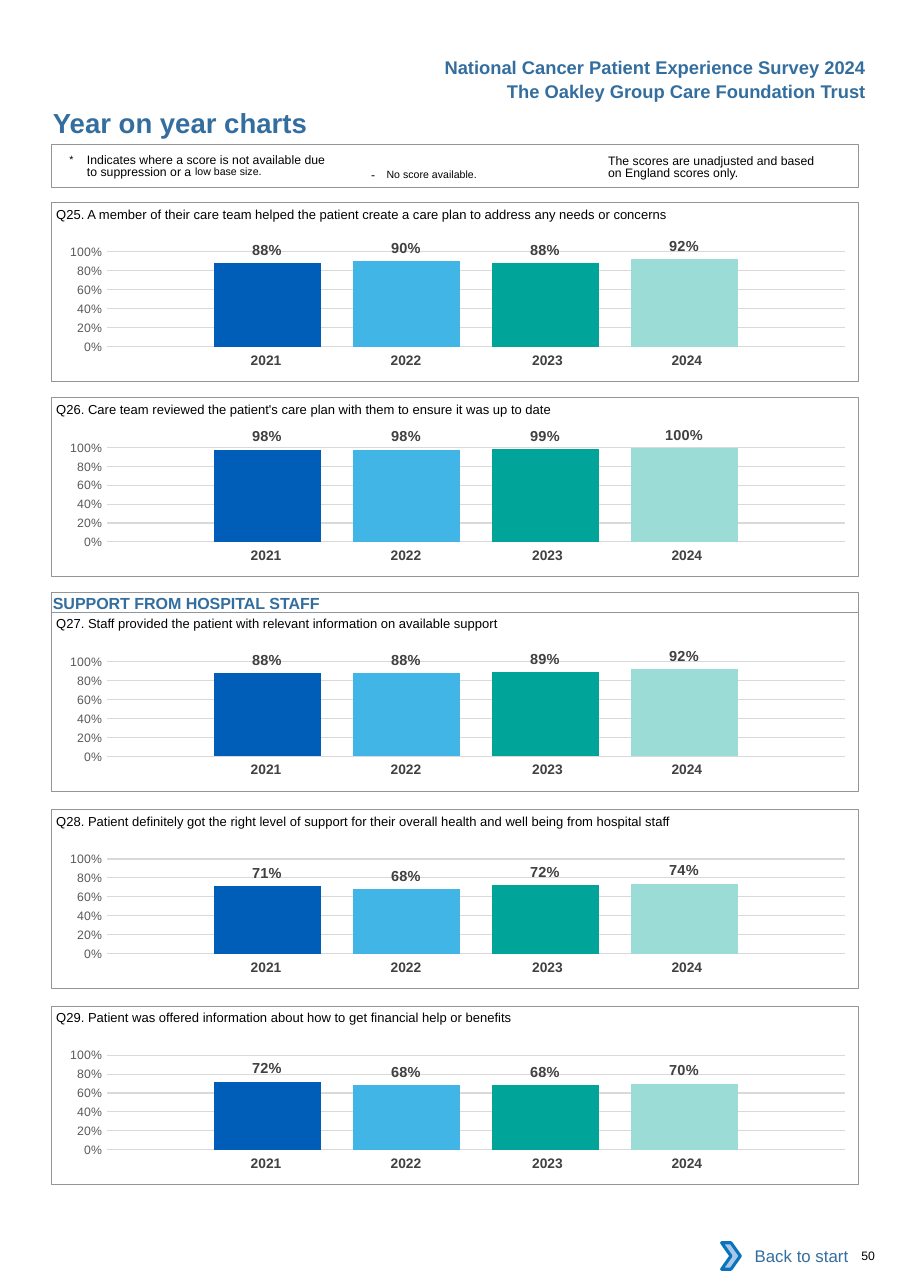
import pptx
import pptx.chart.data
import pptx.dml.color
import pptx.enum.chart
import pptx.enum.shapes
import pptx.enum.text
import pptx.oxml
import pptx.oxml.ns
import pptx.util

Inches = pptx.util.Inches
Pt = pptx.util.Pt
RGBColor = pptx.dml.color.RGBColor
ALIGN = pptx.enum.text.PP_ALIGN
SHAPES = pptx.enum.shapes.MSO_SHAPE
qn = pptx.oxml.ns.qn

HEADING_BLUE = RGBColor(0x33, 0x6E, 0x9F)
BLACK = RGBColor(0, 0, 0)
WHITE = RGBColor(0xFF, 0xFF, 0xFF)
FRAME_GREY = RGBColor(0x93, 0x95, 0x98)
GRID_GREY = RGBColor(0xD9, 0xD9, 0xD9)
AXIS_GREY = RGBColor(0x59, 0x59, 0x59)
LABEL_GREY = RGBColor(0x40, 0x40, 0x40)
YEAR_GREY = RGBColor(0x41, 0x40, 0x42)
CHEVRON_FILL = RGBColor(0xA8, 0xC7, 0xE9)
CHEVRON_LINE = RGBColor(0x0A, 0x74, 0xBB)
YEAR_COLOURS = {
    "2021": RGBColor(0x00, 0x5E, 0xB8),
    "2022": RGBColor(0x41, 0xB6, 0xE6),
    "2023": RGBColor(0x00, 0xA4, 0x99),
    "2024": RGBColor(0x9C, 0xDC, 0xD7),
}

LEFT, WIDTH = 0.47, 7.32
PANEL_HEIGHT = 1.62
YEAR_COLUMNS = [(1.27, 0), (1.27, 0), (1.34, 0.04), (1.27, 0.12)]  # width, right margin

# Panel top, question, score for each year
QUESTIONS = [
    (1.84, "Q25. A member of their care team helped the patient create a care plan "
           "to address any needs or concerns", (0.88, 0.9, 0.88, 0.92)),
    (3.61, "Q26. Care team reviewed the patient's care plan with them to ensure it was "
           "up to date", (0.98, 0.98, 0.99, 1)),
    (5.56, "Q27. Staff provided the patient with relevant information on available "
           "support", (0.88, 0.88, 0.89, 0.92)),
    (7.35, "Q28. Patient definitely got the right level of support for their overall "
           "health and well being from hospital staff", (0.71, 0.68, 0.72, 0.74)),
    (9.13, "Q29. Patient was offered information about how to get financial help or "
           "benefits", (0.72, 0.68, 0.68, 0.7)),
]


def style_font(font, size, colour, bold=False):
    font.name, font.size, font.bold = "Arial", Pt(size), bold
    font.color.rgb = colour


def set_text(frame, text, size, colour, bold=False, align=ALIGN.LEFT, insets=(0, 0, 0, 0)):
    frame.word_wrap = True
    frame.auto_size = pptx.enum.text.MSO_AUTO_SIZE.NONE
    frame.vertical_anchor = pptx.enum.text.MSO_ANCHOR.TOP
    (frame.margin_left, frame.margin_top,
     frame.margin_right, frame.margin_bottom) = map(Inches, insets)
    paragraph = frame.paragraphs[0]
    paragraph.text = text
    paragraph.alignment = align
    style_font(paragraph.font, size, colour, bold)
    return paragraph


def add_text(slide, box, text, size, colour, **options):
    frame = slide.shapes.add_textbox(*map(Inches, box)).text_frame
    return set_text(frame, text, size, colour, **options)


def add_raised_run(paragraph, text, baseline):
    run = paragraph.add_run()
    run.text = text
    run.font.size = Pt(12)
    run.font._element.set("baseline", str(baseline * 1000))


def add_frame(slide, box, line_width=0.5):
    frame = slide.shapes.add_shape(SHAPES.RECTANGLE, *map(Inches, box))
    frame.shadow.inherit = False
    frame.fill.background()
    frame.line.color.rgb = FRAME_GREY
    frame.line.width = Pt(line_width)
    return frame


def add_header(slide):
    lines = ["National Cancer Patient Experience Survey 2024",
             "The Oakley Group Care Foundation Trust"]
    for row, line in enumerate(lines):
        add_text(slide, (3.86, 0.46 + row * 0.22, 4.1, 0.3), line, 12, HEADING_BLUE,
                 bold=True, align=ALIGN.RIGHT, insets=(0.1, 0.05, 0.1, 0.05))
    title = slide.shapes.title
    title.left, title.top, title.width, title.height = map(Inches, (LEFT, 0.96, 4.5, 0.3))
    set_text(title.text_frame, "Year on year charts", 18, HEADING_BLUE, bold=True,
             insets=(0.01, 0, 0, 0))


def add_key(slide, left, top, width, height):
    add_frame(slide, (left, top, width, height), 0.75)

    # Suppressed scores, with a hanging asterisk
    suppressed = add_text(slide, (left + 0.16, top + 0.07, 2.4, 0.27), "", 8, BLACK,
                          insets=(0, 0.03, 0, 0))
    suppressed.line_spacing = Pt(8.1)
    indent = suppressed._p.get_or_add_pPr()
    indent.set("marL", str(Inches(0.16)))
    indent.set("indent", str(Inches(-0.16)))
    add_raised_run(suppressed, "*\t", 3)
    suppressed.add_run().text = "Indicates where a score is not available due to suppression or a "
    add_raised_run(suppressed, "low base size.", 7)

    # Missing scores
    missing = add_text(slide, (left + 2.8, top + 0.1, 1.83, 0.24), "", 8, BLACK,
                       insets=(0.1, 0.05, 0.1, 0.05))
    dash = missing.add_run()
    dash.text = "- "
    dash.font._element.set("spc", "260")
    add_raised_run(missing, "No score available.", 3)

    # Basis of the scores
    basis = add_text(slide, (left + 5.05, top + 0.07, 2.01, 0.27),
                     "The scores are unadjusted and based on England scores only.", 8, BLACK,
                     insets=(0, 0.03, 0, 0))
    basis.line_spacing = Pt(8.1)


def place_plot(chart, x, y, w, h):
    plot_area = chart._chartSpace.chart.plotArea
    for layout in plot_area.findall(qn("c:layout")):
        plot_area.remove(layout)
    sizes = "".join(f'<c:{tag} val="{value}"/>' for tag, value in
                    [("layoutTarget", "inner"), ("xMode", "edge"), ("yMode", "edge"),
                     ("x", x), ("y", y), ("w", w), ("h", h)])
    plot_area.insert(0, pptx.oxml.parse_xml(
        f'<c:layout {pptx.oxml.ns.nsdecls("c")}><c:manualLayout>{sizes}'
        '</c:manualLayout></c:layout>'))


def add_score_chart(slide, box, scores):
    data = pptx.chart.data.CategoryChartData(number_format="0%")
    data.categories = ["1"]
    for number, score in enumerate(scores, 1):
        data.add_series(f"Series {number}", [score])
    chart = slide.shapes.add_chart(pptx.enum.chart.XL_CHART_TYPE.COLUMN_CLUSTERED,
                                   *map(Inches, box), data).chart
    chart.has_legend = chart.has_title = False
    chart.font.name, chart.font.size = "Calibri", Pt(10)
    chart.font.color.rgb = BLACK
    place_plot(chart, 0.079, 0.145, 0.915, 0.666)

    chart.category_axis.visible = False
    axis = chart.value_axis
    axis.minimum_scale, axis.maximum_scale, axis.major_unit = 0, 1, 0.2
    axis.major_tick_mark = pptx.enum.chart.XL_TICK_MARK.NONE
    axis.format.line.fill.background()
    axis.major_gridlines.format.line.color.rgb = GRID_GREY
    axis.major_gridlines.format.line.width = Pt(0.75)
    axis.tick_labels.number_format = "0%"
    axis.tick_labels.number_format_is_linked = False
    style_font(axis.tick_labels.font, 8, AXIS_GREY)

    plot = chart.plots[0]
    plot.gap_width, plot.overlap, plot.vary_by_categories = 200, -30, False
    for series, colour in zip(plot.series, YEAR_COLOURS.values()):
        series.format.fill.solid()
        series.format.fill.fore_color.rgb = colour
        labels = series.data_labels
        labels.show_value = True
        labels.position = pptx.enum.chart.XL_LABEL_POSITION.OUTSIDE_END
        labels.number_format, labels.number_format_is_linked = "0%", False
        style_font(labels.font, 9.5, LABEL_GREY, True)


def add_year_row(slide, left, top):
    width = sum(column for column, _ in YEAR_COLUMNS)
    table = slide.shapes.add_table(1, len(YEAR_COLUMNS), *map(Inches, (left, top, width, 0.27))).table
    table.first_row = table.horz_banding = False
    # "No Style, No Grid"
    table._tbl.tblPr.find(qn("a:tableStyleId")).text = "{2D5ABB26-0587-4C30-8999-92F81FD0307C}"
    table.rows[0].height = Inches(0.27)
    for index, (year, (column, margin)) in enumerate(zip(YEAR_COLOURS, YEAR_COLUMNS)):
        table.columns[index].width = Inches(column)
        cell = table.cell(0, index)
        cell.fill.background()
        cell.margin_left, cell.margin_right = Inches(0.1), Inches(margin)
        cell.margin_top = cell.margin_bottom = Inches(0.05)
        paragraph = cell.text_frame.paragraphs[0]
        paragraph.text, paragraph.alignment = year, ALIGN.CENTER
        style_font(paragraph.font, 9, YEAR_GREY, True)


def add_question_panel(slide, left, top, width, height, question, scores):
    add_score_chart(slide, (left - 0.08, top + 0.26, width, 1.29), scores)
    add_frame(slide, (left, top, width, height))
    add_year_row(slide, left + 1.26, top + 1.31)
    add_text(slide, (left + 0.03, top - 0.06, width - 0.03, 0.24), question, 8.5, BLACK,
             insets=(0.01, 0.09, 0, 0))


def add_section_band(slide, left, top, width, height):
    band = add_frame(slide, (left, top, width, height))
    set_text(band.text_frame, "SUPPORT FROM HOSPITAL STAFF", 10.5, HEADING_BLUE, bold=True,
             insets=(0.01, 0.01, 0, 0))


def add_footer(slide, left, top):
    back = slide.shapes.add_shape(SHAPES.RECTANGLE, *map(Inches, (left + 0.07, top, 1.18, 0.42)))
    back.shadow.inherit = False
    back.fill.solid()
    back.fill.fore_color.rgb = WHITE
    back.line.fill.background()
    set_text(back.text_frame, "Back to start", 11, HEADING_BLUE, align=ALIGN.RIGHT,
             insets=(0.1, 0.05, 0.1, 0.05))
    back.text_frame.vertical_anchor = pptx.enum.text.MSO_ANCHOR.MIDDLE

    chevron = slide.shapes.add_shape(SHAPES.CHEVRON, *map(Inches, (left, top + 0.09, 0.17, 0.24)))
    chevron.shadow.inherit = False
    chevron.fill.solid()
    chevron.fill.fore_color.rgb = CHEVRON_FILL
    chevron.line.color.rgb = CHEVRON_LINE
    chevron.line.width = Pt(2)

    # Page number
    add_text(slide, (left + 1.17, top + 0.14, 0.51, 0.13), "50", 8, BLACK, insets=(0.1, 0, 0, 0))


def main():
    deck = pptx.Presentation()
    deck.slide_width, deck.slide_height = Inches(8.26), Inches(11.69)
    slide = deck.slides.add_slide(deck.slide_layouts[5])
    add_header(slide)
    add_key(slide, LEFT, 1.31, WIDTH, 0.39)
    for top, question, scores in QUESTIONS:
        add_question_panel(slide, LEFT, top, WIDTH, PANEL_HEIGHT, question, scores)
    add_section_band(slide, LEFT, 5.38, WIDTH, 0.18)
    add_footer(slide, 6.55, 11.19)
    deck.save("out.pptx")


if __name__ == "__main__":
    main()
